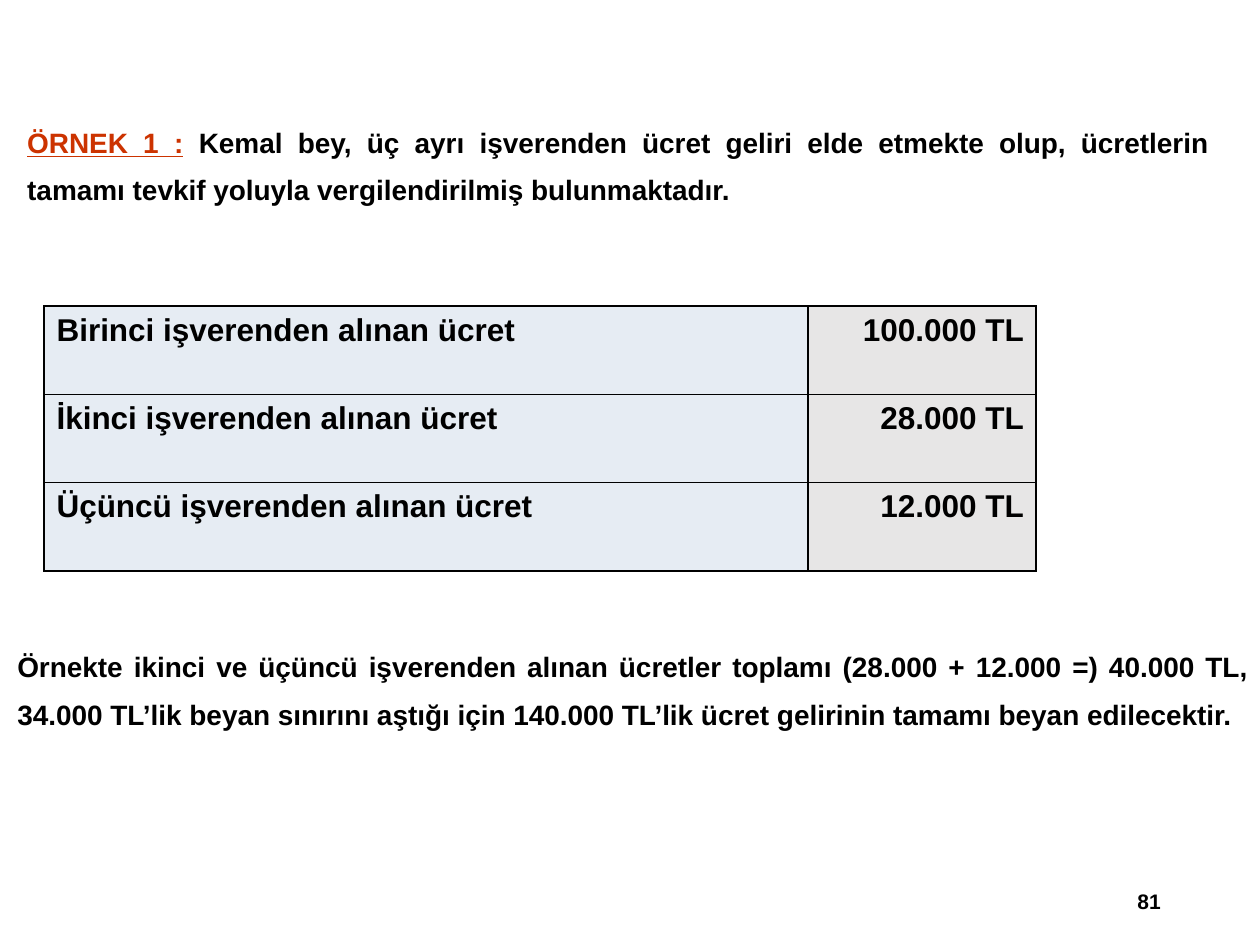
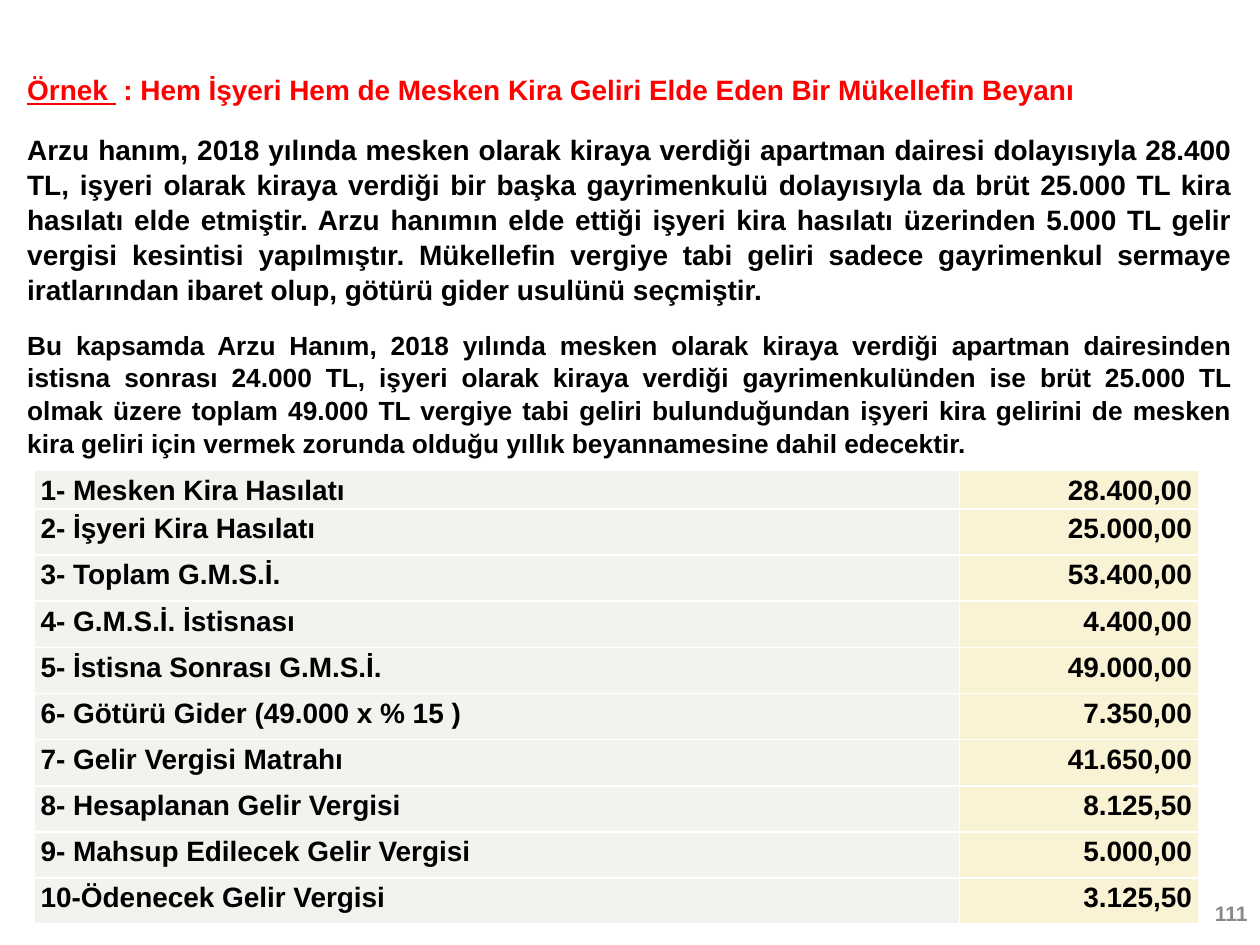
import pptx
import pptx.util
import pptx.dml.color
import pptx.enum.text
import pptx.oxml

Cm = pptx.util.Cm
Pt = pptx.util.Pt
RGB = pptx.dml.color.RGBColor
ALIGN = pptx.enum.text.PP_ALIGN
ANCHOR = pptx.enum.text.MSO_ANCHOR

FONT = "Arial"
BLACK = RGB(0x00, 0x00, 0x00)
WHITE = RGB(0xFF, 0xFF, 0xFF)
RUST = RGB(0xCC, 0x33, 0x00)
RED = RGB(0xFF, 0x00, 0x00)
GREY = RGB(0x89, 0x89, 0x89)
BLUE = RGB(0xE6, 0xEC, 0xF3)
SILVER = RGB(0xE7, 0xE6, 0xE6)
SAGE = RGB(0xF0, 0xF3, 0xEE)
CREAM = RGB(0xFA, 0xF2, 0xD4)
NS = "http://schemas.openxmlformats.org/drawingml/2006/main"

WAGE = {
    "page": ("81", BLACK, (17.93, 17.65, 5.72, 1.02)),
    "texts": [
        {"box": (0.3, 2.13, 24.33, 2.87), "paras": [
            {"lead": Pt(27), "runs": [
                ("ÖRNEK 1 :", 16, RUST, True),
                (" ", 16, RUST, False),
                ("Kemal bey, üç ayrı işverenden ücret geliri elde etmekte olup, "
                 "ücretlerin tamamı tevkif yoluyla vergilendirilmiş bulunmaktadır.",
                 16, BLACK, False)]}]},
        {"box": (0.1, 12.7, 25.32, 2.74), "paras": [
            {"lead": Pt(27), "runs": [
                ("Örnekte ikinci ve üçüncü işverenden alınan ücretler toplamı "
                 "(28.000 + 12.000 =) 40.000 TL, 34.000 TL’lik beyan sınırını "
                 "aştığı için 140.000 TL’lik ücret gelirinin tamamı beyan "
                 "edilecektir.", 16, BLACK, False)]}]},
    ],
    "table": {
        "at": (0.89, 6.17), "cols": (15.4, 4.6), "first": 1.78, "rest": 1.78,
        "pad": (0.25, 0.13), "size": 18, "lead": 1.0,
        "fills": (BLUE, SILVER), "edge": BLACK,
        "rows": [
            ("Birinci işverenden alınan ücret", "100.000 TL"),
            ("İkinci işverenden alınan ücret", "28.000 TL"),
            ("Üçüncü işverenden alınan ücret", "12.000 TL"),
        ]},
}

RENT = {
    "page": ("111", GREY, (23.98, 17.78, 1.42, 1.27)),
    "texts": [
        {"box": (0.3, 1.32, 24.79, 7.77), "paras": [
            {"lead": 1.04, "runs": [
                ("Örnek ", 16, RED, True),
                (" : Hem İşyeri Hem de Mesken Kira Geliri Elde Eden Bir "
                 "Mükellefin Beyanı", 16, RED, False)]},
            {"lead": 1.04, "gap": 14, "runs": [
                ("Arzu hanım, 2018 yılında mesken olarak kiraya verdiği apartman "
                 "dairesi dolayısıyla 28.400 TL, işyeri olarak kiraya verdiği bir "
                 "başka gayrimenkulü dolayısıyla da brüt 25.000 TL kira hasılatı "
                 "elde etmiştir. Arzu hanımın elde ettiği işyeri kira hasılatı "
                 "üzerinden 5.000 TL gelir vergisi kesintisi yapılmıştır. "
                 "Mükellefin vergiye tabi geliri sadece gayrimenkul sermaye "
                 "iratlarından ibaret olup, götürü gider usulünü seçmiştir.",
                 16, BLACK, False)]},
            {"lead": 1.04, "gap": 12.5, "runs": [
                ("Bu kapsamda Arzu Hanım, 2018 yılında mesken olarak kiraya "
                 "verdiği apartman dairesinden istisna sonrası 24.000 TL, işyeri "
                 "olarak kiraya verdiği gayrimenkulünden ise brüt 25.000 TL olmak "
                 "üzere toplam 49.000 TL vergiye tabi geliri bulunduğundan işyeri "
                 "kira gelirini de mesken kira geliri için vermek zorunda olduğu "
                 "yıllık beyannamesine dahil edecektir.", 15, BLACK, False)]},
        ]},
    ],
    "table": {
        "at": (0.69, 9.48), "cols": (18.65, 4.82), "first": 0.78, "rest": 0.93,
        "pad": (0.13, 0), "size": 16, "lead": 1.15,
        "fills": (SAGE, CREAM), "edge": WHITE,
        "rows": [
            ("1- Mesken Kira Hasılatı", "28.400,00"),
            ("2- İşyeri Kira Hasılatı", "25.000,00"),
            ("3- Toplam G.M.S.İ.", "53.400,00"),
            ("4- G.M.S.İ. İstisnası", "4.400,00"),
            ("5- İstisna Sonrası G.M.S.İ.", "49.000,00"),
            ("6- Götürü Gider (49.000 x % 15 )", "7.350,00"),
            ("7- Gelir Vergisi Matrahı", "41.650,00"),
            ("8- Hesaplanan Gelir Vergisi", "8.125,50"),
            ("9- Mahsup Edilecek Gelir Vergisi", "5.000,00"),
            ("10-Ödenecek Gelir Vergisi", "3.125,50"),
        ]},
}


def add_run(para, text, size, tint, under=False):
    run = para.add_run()
    run.text = text
    font = run.font
    font.name, font.size, font.bold = FONT, Pt(size), True
    font.color.rgb = tint
    if under:
        font.underline = True


def add_box(slide, box):
    frame = slide.shapes.add_textbox(*map(Cm, box)).text_frame
    frame.word_wrap = True
    return frame


def add_page(slide, text, tint, box):
    frame = add_box(slide, box)
    frame.vertical_anchor = ANCHOR.MIDDLE
    para = frame.paragraphs[0]
    para.alignment = ALIGN.RIGHT
    add_run(para, text, 12, tint)


def add_text(slide, box, paras):
    frame = add_box(slide, box)
    for i, part in enumerate(paras):
        para = frame.add_paragraph() if i else frame.paragraphs[0]
        para.alignment = ALIGN.JUSTIFY
        para.line_spacing = part["lead"]
        para.space_before = Pt(part.get("gap", 0))
        for run in part["runs"]:
            add_run(para, *run)


def set_edge(cell, tint):
    props = cell._tc.get_or_add_tcPr()
    for i, side in enumerate("LRTB"):
        props.insert(i, pptx.oxml.parse_xml(
            f'<a:ln{side} xmlns:a="{NS}" w="12700"><a:solidFill>'
            f'<a:srgbClr val="{tint}"/></a:solidFill></a:ln{side}>'))


def add_grid(slide, data):
    rows, cols = data["rows"], data["cols"]
    highs = [data["first"]] + [data["rest"]] * (len(rows) - 1)
    size = (sum(cols), sum(highs))
    grid = slide.shapes.add_table(
        len(rows), len(cols), *map(Cm, data["at"] + size)).table
    grid.first_row = grid.horz_banding = False
    for col, wide in zip(grid.columns, cols):
        col.width = Cm(wide)
    side, top = map(Cm, data["pad"])
    for i, (row, high) in enumerate(zip(rows, highs)):
        grid.rows[i].height = Cm(high)
        for j, text in enumerate(row):
            cell = grid.cell(i, j)
            cell.margin_left = cell.margin_right = side
            cell.margin_top = cell.margin_bottom = top
            cell.fill.solid()
            cell.fill.fore_color.rgb = data["fills"][j]
            set_edge(cell, data["edge"])
            para = cell.text_frame.paragraphs[0]
            para.alignment = (ALIGN.LEFT, ALIGN.RIGHT)[j]
            para.line_spacing = data["lead"]
            add_run(para, text, data["size"], BLACK)


def main():
    deck = pptx.Presentation()
    deck.slide_width, deck.slide_height = Cm(25.4), Cm(19.05)
    for data in (WAGE, RENT):
        slide = deck.slides.add_slide(deck.slide_layouts[6])
        add_page(slide, *data["page"])
        for text in data["texts"]:
            add_text(slide, text["box"], text["paras"])
        add_grid(slide, data["table"])
    deck.save("out.pptx")


if __name__ == "__main__":
    main()
